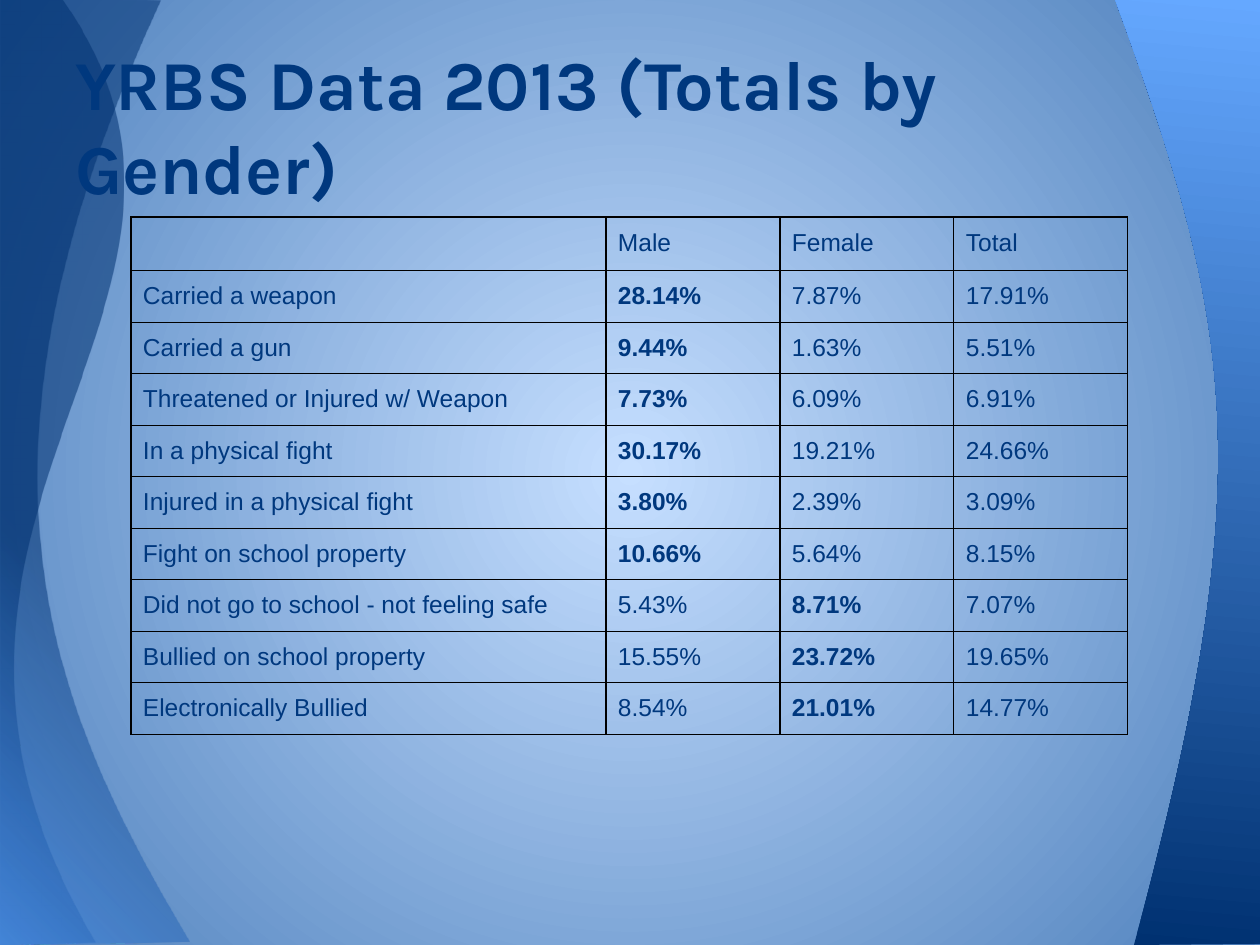
from lxml.etree import SubElement
from pptx import Presentation
from pptx.dml.color import RGBColor
from pptx.enum.text import MSO_ANCHOR, MSO_AUTO_SIZE, PP_ALIGN
from pptx.oxml.ns import qn
from pptx.util import Pt

EMU_PER_PX = 914400 / 126
NAVY = RGBColor(0x00, 0x38, 0x7E)
BLACK = RGBColor(0x00, 0x00, 0x00)
DEEP_BLUE = RGBColor(0x00, 0x31, 0x71)
BRIGHT_BLUE = RGBColor(0x54, 0x9F, 0xFF)
SKY_BLUE = RGBColor(0x65, 0xA8, 0xFF)
PALE_BLUE = RGBColor(0xC6, 0xDF, 0xFF)
STEEL_BLUE = RGBColor(0x4F, 0x81, 0xBD)

TITLE = "YRBS Data 2013 (Totals by Gender)"
TITLE_FONT = dict(name="Karla", size=Pt(40), bold=True)
TABLE_FONT = dict(name="Arial", size=Pt(14))
COLUMN_WIDTHS = (475, 174, 174, 174)
ROW_HEIGHT = 47
CELL_MARGIN = 12
HEADER = ("", "Male", "Female", "Total")
SURVEY = [
    ("Carried a weapon", 28.14, 7.87, 17.91),
    ("Carried a gun", 9.44, 1.63, 5.51),
    ("Threatened or Injured w/ Weapon", 7.73, 6.09, 6.91),
    ("In a physical fight", 30.17, 19.21, 24.66),
    ("Injured in a physical fight", 3.80, 2.39, 3.09),
    ("Fight on school property", 10.66, 5.64, 8.15),
    ("Did not go to school - not feeling safe", 5.43, 8.71, 7.07),
    ("Bullied on school property", 15.55, 23.72, 19.65),
    ("Electronically Bullied", 8.54, 21.01, 14.77),
]

# Each step is one point for a line, or three for a Bézier curve.
WIDE_RIBBON = [[(189, 942)], [(-1, 945)], [(0, -1)], [(160, 1)],
               [(-48, 457), (42, 694), (189, 942)]]
NARROW_RIBBON = [[(95, 942)], [(1, 945)], [(1, -1)], [(63, 1)],
                 [(273, 306), (-154, 517), (95, 942)]]
RIGHT_RIBBON = [[(1266, 944)], [(1134, 945)],
                [(1261, 478), (1236, 329), (1115, -1)], [(1266, -1)]]
RIBBON_STOPS = [(0, BRIGHT_BLUE), (41, DEEP_BLUE), (100, DEEP_BLUE)]


def px(length):
    return round(length * EMU_PER_PX)


def set_attributes(target, values):
    for key, value in values.items():
        setattr(target, key, value)


def set_gradient(owner, fill, stops, focus=None, angle=0, opacity=100):
    """Use a circular gradient around focus (l, t, r, b in %), else a linear one."""
    fill.gradient()
    gradient = next(owner.iter(qn("a:gradFill")))
    for child in list(gradient):
        gradient.remove(child)
    stop_list = SubElement(gradient, qn("a:gsLst"))
    for position, color in stops:
        stop = SubElement(stop_list, qn("a:gs"), pos=str(position * 1000))
        rgb = SubElement(stop, qn("a:srgbClr"), val=str(color))
        if opacity < 100:
            SubElement(rgb, qn("a:alpha"), val=str(opacity * 1000))
    if focus:
        circle = SubElement(gradient, qn("a:path"))
        circle.set("path", "circle")
        SubElement(circle, qn("a:fillToRect"),
                   {side: str(value * 1000) for side, value in zip("ltrb", focus)})
    else:
        SubElement(gradient, qn("a:lin"), ang=str(angle * 60000), scaled="0")


def add_ribbon(slide, steps, stops, **gradient):
    """Draw all points as line ends, then join each group of three into a curve."""
    (start,), *rest = steps
    builder = slide.shapes.build_freeform(*start, scale=EMU_PER_PX)
    builder.add_line_segments([point for step in rest for point in step], close=True)
    ribbon = builder.convert_to_shape()
    lines = iter(list(ribbon._element.iter(qn("a:lnTo"))))
    for step in rest:
        segment = [next(lines) for _ in step]
        if len(segment) == 3:
            curve = segment[0].makeelement(qn("a:cubicBezTo"))
            segment[0].addprevious(curve)
            for line in segment:
                curve.append(line[0])
                line.getparent().remove(line)
    ribbon.shadow.inherit = False
    ribbon.line.fill.background()
    set_gradient(ribbon._element, ribbon.fill, stops, **gradient)


def add_title(slide):
    title = slide.shapes.title
    slide.shapes._spTree.append(title._element)  # in front of the ribbons
    set_attributes(title, dict(left=px(63), top=px(38), width=px(1134), height=px(183)))
    frame = title.text_frame
    frame.text = TITLE
    margins = {f"margin_{side}": px(CELL_MARGIN) for side in ("left", "right", "top", "bottom")}
    set_attributes(frame, dict(margins, vertical_anchor=MSO_ANCHOR.BOTTOM,
                               auto_size=MSO_AUTO_SIZE.NONE, word_wrap=True))
    paragraph = frame.paragraphs[0]
    paragraph.alignment = PP_ALIGN.LEFT
    font = paragraph.runs[0].font
    set_attributes(font, TITLE_FONT)
    font.color.rgb = NAVY


def add_borders(cell):
    properties = cell._tc.get_or_add_tcPr()
    for index, side in enumerate(("lnL", "lnR", "lnT", "lnB")):
        border = properties.makeelement(qn(f"a:{side}"), w=str(Pt(0.75)))
        properties.insert(index, border)
        solid = SubElement(border, qn("a:solidFill"))
        SubElement(solid, qn("a:srgbClr"), val=str(BLACK))


def fill_cell(cell, text, bold):
    cell.fill.background()
    add_borders(cell)
    for side in ("left", "right", "top", "bottom"):
        setattr(cell, f"margin_{side}", px(CELL_MARGIN))
    paragraph = cell.text_frame.paragraphs[0]
    if not text:
        paragraph._p.get_or_add_endParaRPr().set("sz", "1400")
        return
    run = paragraph.add_run()
    run.text = text
    set_attributes(run.font, dict(TABLE_FONT, bold=bold))
    run.font.color.rgb = NAVY


def add_survey_table(slide):
    """Show the shares by gender, with the higher gender of each row in bold."""
    rows = len(SURVEY) + 1
    table = slide.shapes.add_table(rows, len(HEADER), px(131), px(217),
                                   px(sum(COLUMN_WIDTHS)), px(rows * ROW_HEIGHT)).table
    set_attributes(table, dict(first_row=False, horz_banding=False))
    for column, width in zip(table.columns, COLUMN_WIDTHS):
        column.width = px(width)
    for cell, heading in zip(table.rows[0].cells, HEADER):
        fill_cell(cell, heading, False)
    for row, (behaviour, male, female, total) in zip(list(table.rows)[1:], SURVEY):
        label, *shares = row.cells
        fill_cell(label, behaviour, False)
        leads = (male > female, female > male, False)
        for cell, share, leading in zip(shares, (male, female, total), leads):
            fill_cell(cell, f"{share:.2f}%", leading)


def main():
    deck = Presentation()
    set_attributes(deck, dict(slide_width=px(1260), slide_height=px(945)))
    slide = deck.slides.add_slide(deck.slide_layouts[5])
    set_gradient(slide._element, slide.background.fill,
                 [(0, PALE_BLUE), (100, STEEL_BLUE)], focus=(50, 50, 50, 50))
    for steps in (WIDE_RIBBON, NARROW_RIBBON):
        add_ribbon(slide, steps, RIBBON_STOPS, focus=(0, 100, 100, 0), opacity=54)
    add_ribbon(slide, RIGHT_RIBBON, [(0, DEEP_BLUE), (100, SKY_BLUE)], angle=275)
    add_title(slide)
    add_survey_table(slide)
    deck.save("out.pptx")


if __name__ == "__main__":
    main()
